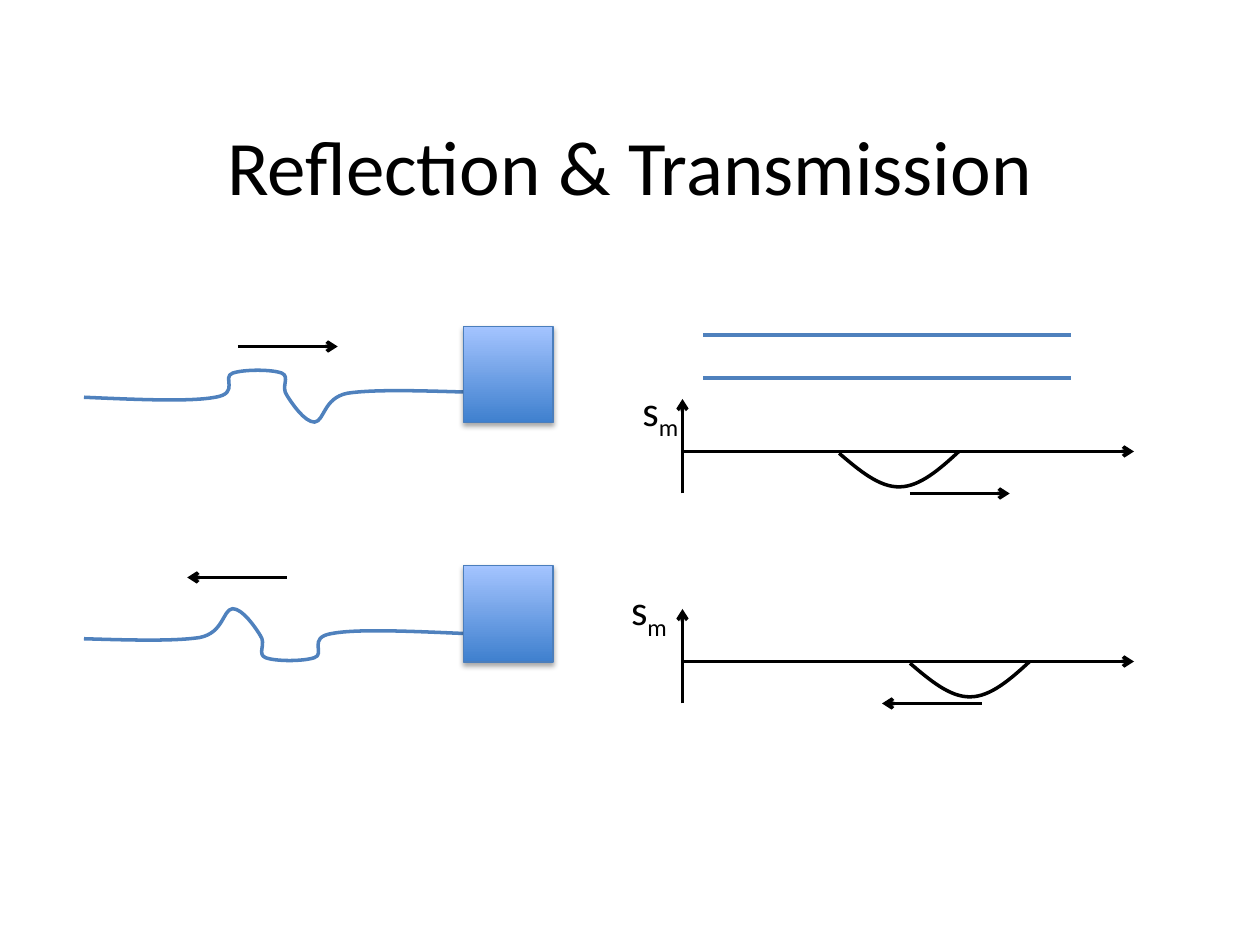
from lxml.etree import SubElement as Sub
from pptx import Presentation
from pptx.dml.color import RGBColor
from pptx.enum.shapes import MSO_CONNECTOR as Conn, MSO_SHAPE as Shape
from pptx.enum.text import MSO_ANCHOR as Anchor, MSO_AUTO_SIZE as Auto, PP_ALIGN as Align
from pptx.oxml.ns import qn
from pptx.util import Pt

# Content, lengths in points
TITLE = "Reflection & Transmission"
BLACK, BLUE = "000000", "4F81BD"
BOX = {"edge": "4B7EBC", "stops": ("3F80CE", "A4C4FF")}

# Bezier points: a start, then three for each curve
PULSE = [
    (0, 16),
    (30, 17.3), (60.5, 18.7), (75, 16),
    (89.3, 13.7), (78.5, 4.3), (85, 2.2),
    (91.4, 0), (107.3, 0), (113, 2.2),
    (118, 4.3), (112.3, 10), (116, 15),
    (118.8, 19.5), (126, 30.2), (131.8, 30.2),
    (137.5, 29.5), (136.8, 16.5), (150.5, 13.7),
    (165, 11.5), (190.8, 12.2), (216.7, 13),
]
DIP = [(0, 1), (11.5, 10.8), (23, 20.5), (34.5, 20.2),
       (46, 20.2), (57.6, 10), (68.4, 0)]
PULSE_W, PULSE_H = 216.7, 30.2

# Ropes: curve top, box top, arrow (x1, x2, y), turned half round
ROPES = [
    (211, 186.5, (136, 193, 198), False),
    (347.8, 323.3, (164, 107, 330), True),
]
# Graphs: axis height, dip left, label corner, arrow (x1, x2)
GRAPHS = [
    (258, 479.5, (360, 216), (520, 577)),
    (378, 520, (353.5, 330), (561, 504)),
]
PIPE = (191.5, 216)

prs = Presentation()
prs.slide_width, prs.slide_height = Pt(720), Pt(540)
slide = prs.slides.add_slide(prs.slide_layouts[6])
shapes = slide.shapes


def rgb(code):
    return RGBColor.from_string(code)


def pen(item, color, width=2):
    item.line.color.rgb = rgb(color)
    item.line.width = Pt(width)


def stroke(x1, y1, x2, y2, color=BLACK, head=True):
    line = shapes.add_connector(Conn.STRAIGHT, Pt(x1), Pt(y1), Pt(x2), Pt(y2))
    pen(line, color)
    props = line._element.spPr
    if head:
        Sub(props.find(qn("a:ln")), qn("a:tailEnd"), type="arrow")
    Sub(props, qn("a:effectLst"))


def curve(points, left, top, color):
    spots = [(Pt(left + x), Pt(top + y)) for x, y in points]
    build = shapes.build_freeform(*spots[0])
    build.add_line_segments(spots[1:], close=False)
    form = build.convert_to_shape()
    form.shadow.inherit = False
    form.fill.background()
    pen(form, color)
    # Join each three segments into one cubic curve
    path = next(form._element.iter(qn("a:path")))
    steps = path.findall(qn("a:lnTo"))
    for i in range(0, len(steps), 3):
        cubic = Sub(path, qn("a:cubicBezTo"))
        for step in steps[i:i + 3]:
            cubic.append(step[0])
            path.remove(step)


def block(left, top, width, height):
    box = shapes.add_shape(Shape.RECTANGLE, Pt(left), Pt(top), Pt(width), Pt(height))
    pen(box, BOX["edge"], 0.75)
    box.fill.gradient()
    box.fill.gradient_angle = 90
    for stop, color in zip(box.fill.gradient_stops, BOX["stops"]):
        stop.color.rgb = rgb(color)
    box.shadow.inherit = False
    effect = box._element.spPr.find(qn("a:effectLst"))
    shade = Sub(effect, qn("a:outerShdw"), blurRad=str(Pt(3.1)),
                dist=str(Pt(1.8)), dir="5400000", rotWithShape="0")
    tint = Sub(shade, qn("a:srgbClr"), val=BLACK)
    Sub(tint, qn("a:alpha"), val="35000")


def text(area, parts, size, frame, align=Align.LEFT):
    box = shapes.add_textbox(*map(Pt, area))
    for name, value in frame.items():
        setattr(box.text_frame, name, value)
    para = box.text_frame.paragraphs[0]
    para.alignment = align
    for words, base in parts:
        run = para.add_run()
        run.text = words
        look = {"name": "Calibri", "size": Pt(size)}
        for name, value in look.items():
            setattr(run.font, name, value)
        run.font.color.rgb = rgb(BLACK)
        if base:
            run._r.get_or_add_rPr().set("baseline", str(base * 1000))


# Title
text((54, 36, 612, 116), [(TITLE, 0)], 44,
     {"word_wrap": True, "vertical_anchor": Anchor.MIDDLE}, Align.CENTER)

# Ropes tied to a block
for top, box_top, (x1, x2, y), turned in ROPES:
    points = [(PULSE_W - x, PULSE_H - y) for x, y in PULSE] if turned else PULSE
    stroke(x1, y, x2, y)
    curve(points, 48, top, BLUE)
    block(265, box_top, 51, 55)

# Pipe walls
for y in PIPE:
    stroke(402, y, 612, y, BLUE, head=False)

# Displacement graphs
for axis, dip, corner, (x1, x2) in GRAPHS:
    stroke(390, axis, 648, axis)
    stroke(390, axis + 24, 390, axis - 30)
    curve(DIP, dip, axis, BLACK)
    stroke(x1, axis + 24, x2, axis + 24)
    text((*corner, 36.7, 36), [("s", 0), ("m", -25)], 24,
         {"word_wrap": False, "auto_size": Auto.SHAPE_TO_FIT_TEXT})

prs.save("out.pptx")
